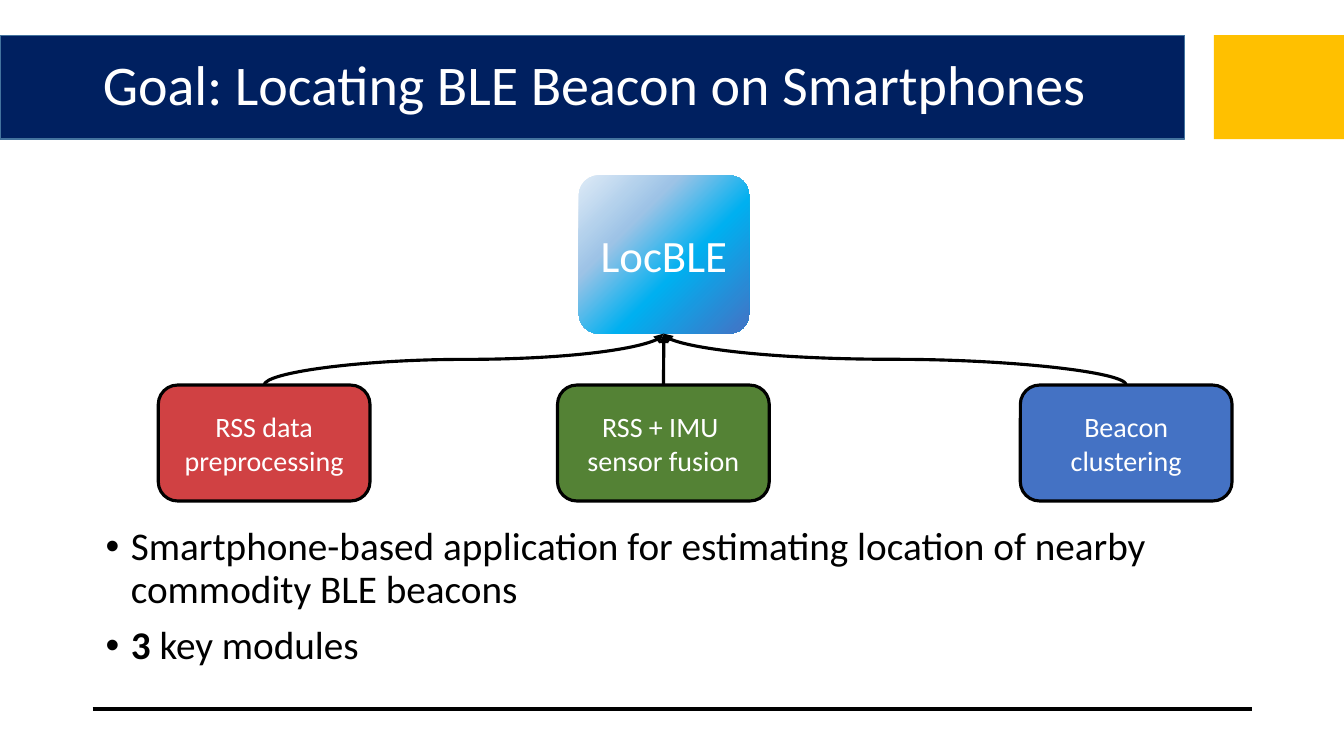
from lxml import etree
from pptx import Presentation
from pptx.dml.color import RGBColor
from pptx.enum import shapes, text
from pptx.oxml import parse_xml
from pptx.oxml.ns import nsdecls, qn
from pptx.util import Inches, Pt

FONT = "Calibri"
BLACK, WHITE = "000000", "FFFFFF"
MODULE_TOP, MODULE_W, MODULE_H = 3.82, 2.1, 1.15
MODULES = [
    (1.57, "D04143", ["RSS data preprocessing"]),
    (5.53, "548235", ["RSS + IMU ", "sensor fusion"]),
    (10.12, "4472C4", ["Beacon clustering"]),
]
APP_STOPS = [(0, "DEEBF7"), (31, "9DC3E6"), (59, "00B0F0"), (100, "4472C4")]


def rgb(value):
    return RGBColor.from_string(value)


def add_run(p, words, size, color, bold=False):
    r = p.add_run()
    r.text = words
    r.font.name, r.font.size, r.font.bold = FONT, Pt(size), bold
    r.font.color.rgb = rgb(color)


def add_box(s, kind, box, fill, line=None, width=1):
    sp = s.shapes.add_shape(kind, *map(Inches, box))
    sp.shadow.inherit = False
    sp.fill.solid()
    sp.fill.fore_color.rgb = rgb(fill)
    if line:
        sp.line.color.rgb = rgb(line)
        sp.line.width = Pt(width)
    else:
        sp.line.fill.background()
    return sp


def add_label(sp, lines, size):
    tf = sp.text_frame
    tf.word_wrap = True
    tf.vertical_anchor = text.MSO_ANCHOR.MIDDLE
    for i, words in enumerate(lines):
        p = tf.add_paragraph() if i else tf.paragraphs[0]
        p.alignment = text.PP_ALIGN.CENTER
        add_run(p, words, size, WHITE)


def set_gradient(sp, stops, angle):
    sp.fill.gradient()
    sp.fill.gradient_angle = -angle % 360
    stop_list = sp._element.spPr.find(qn("a:gradFill")).find(qn("a:gsLst"))
    for stop in list(stop_list):
        stop_list.remove(stop)
    for percent, color in stops:
        stop_list.append(parse_xml(
            f'<a:gs {nsdecls("a")} pos="{percent * 1000}">'
            f'<a:srgbClr val="{color}"/></a:gs>'))


def add_line(s, start, end, width, kind=shapes.MSO_CONNECTOR.STRAIGHT, arrow=False):
    line = s.shapes.add_connector(kind, *map(Inches, start + end))
    line.line.color.rgb = rgb(BLACK)
    line.line.width = Pt(width)
    if arrow:
        ln = line.line._get_or_add_ln()
        etree.SubElement(ln, qn("a:tailEnd"), type="triangle")
    etree.SubElement(line._element.spPr, qn("a:effectLst"))
    return line


def add_rising_curve(s, start, end):
    """Curve that leaves upwards: a sideways curve turned by 270 degrees."""
    (x1, y1), (x2, y2) = start, end
    cx, cy = (x1 + x2) / 2, (y1 + y2) / 2
    half_w, half_h = (y1 - y2) / 2, (x2 - x1) / 2
    curve = add_line(s, (cx - half_w, cy - half_h), (cx + half_w, cy + half_h),
                     2.25, shapes.MSO_CONNECTOR.CURVE, arrow=True)
    curve._element.spPr.find(qn("a:xfrm")).set("rot", str(270 * 60000))


def add_title(s, words):
    title = s.shapes.title
    s.shapes._spTree.append(title._element)  # in front of the band
    title.left, title.top = Inches(0.92), Inches(0.35)
    title.width, title.height = Inches(11.5), Inches(1.03)
    tf = title.text_frame
    tf.auto_size = text.MSO_AUTO_SIZE.NONE
    tf.vertical_anchor = text.MSO_ANCHOR.MIDDLE
    p = tf.paragraphs[0]
    p.alignment = text.PP_ALIGN.LEFT
    p.line_spacing = 0.9
    add_run(p, words, 40, WHITE)


def add_bullets(s, box, items):
    tf = s.shapes.add_textbox(*map(Inches, box)).text_frame
    tf.word_wrap = True
    for i, runs in enumerate(items):
        p = tf.add_paragraph() if i else tf.paragraphs[0]
        p.line_spacing = 0.9
        p.space_before = Pt(10 if i else 0)
        pPr = p._p.get_or_add_pPr()
        pPr.set("marL", str(Inches(0.25)))
        pPr.set("indent", str(Inches(-0.25)))
        etree.SubElement(pPr, qn("a:buFont"), typeface="Arial")
        etree.SubElement(pPr, qn("a:buChar"), char="•")
        for words, bold in runs:
            add_run(p, words, 28, BLACK, bold)


def main():
    prs = Presentation()
    prs.slide_width, prs.slide_height = Inches(13.33), Inches(7.5)
    s = prs.slides.add_slide(prs.slide_layouts[5])
    rect = shapes.MSO_SHAPE.RECTANGLE
    rounded = shapes.MSO_SHAPE.ROUNDED_RECTANGLE

    # Title band and bottom rule
    add_box(s, rect, (0, 0.35, 11.75, 1.03), "002060", "43739E")
    add_box(s, rect, (12.04, 0.35, 1.3, 1.03), "FFC000")
    add_line(s, (0.92, 7.03), (12.42, 7.03), 3)
    add_title(s, "Goal: Locating BLE Beacon on Smartphones")

    # Description
    add_bullets(s, (0.95, 5.18, 11.27, 1.81), [
        [("Smartphone-based application for estimating location of nearby "
          "commodity BLE beacons", False)],
        [("3 ", True), ("key modules", False)],
    ])

    # Application
    app = add_box(s, rounded, (5.74, 1.74, 1.69, 1.57), WHITE)
    app.adjustments[0] = 0.126
    set_gradient(app, APP_STOPS, 45)
    add_label(app, ["LocBLE"], 32)
    app_foot = (6.58, 3.31)

    # Modules, each with an arrow to the application
    for left, color, lines in MODULES:
        module = add_box(s, rounded, (left, MODULE_TOP, MODULE_W, MODULE_H),
                         color, BLACK, 2.25)
        add_label(module, lines, 20)
        head = (left + MODULE_W / 2, MODULE_TOP)
        if abs(head[0] - app_foot[0]) < 0.01:
            arrow = add_line(s, head, app_foot, 2.25, arrow=True)
            arrow.begin_connect(module, 0)
            arrow.end_connect(app, 2)
        else:
            add_rising_curve(s, head, app_foot)

    prs.save("out.pptx")


if __name__ == "__main__":
    main()
